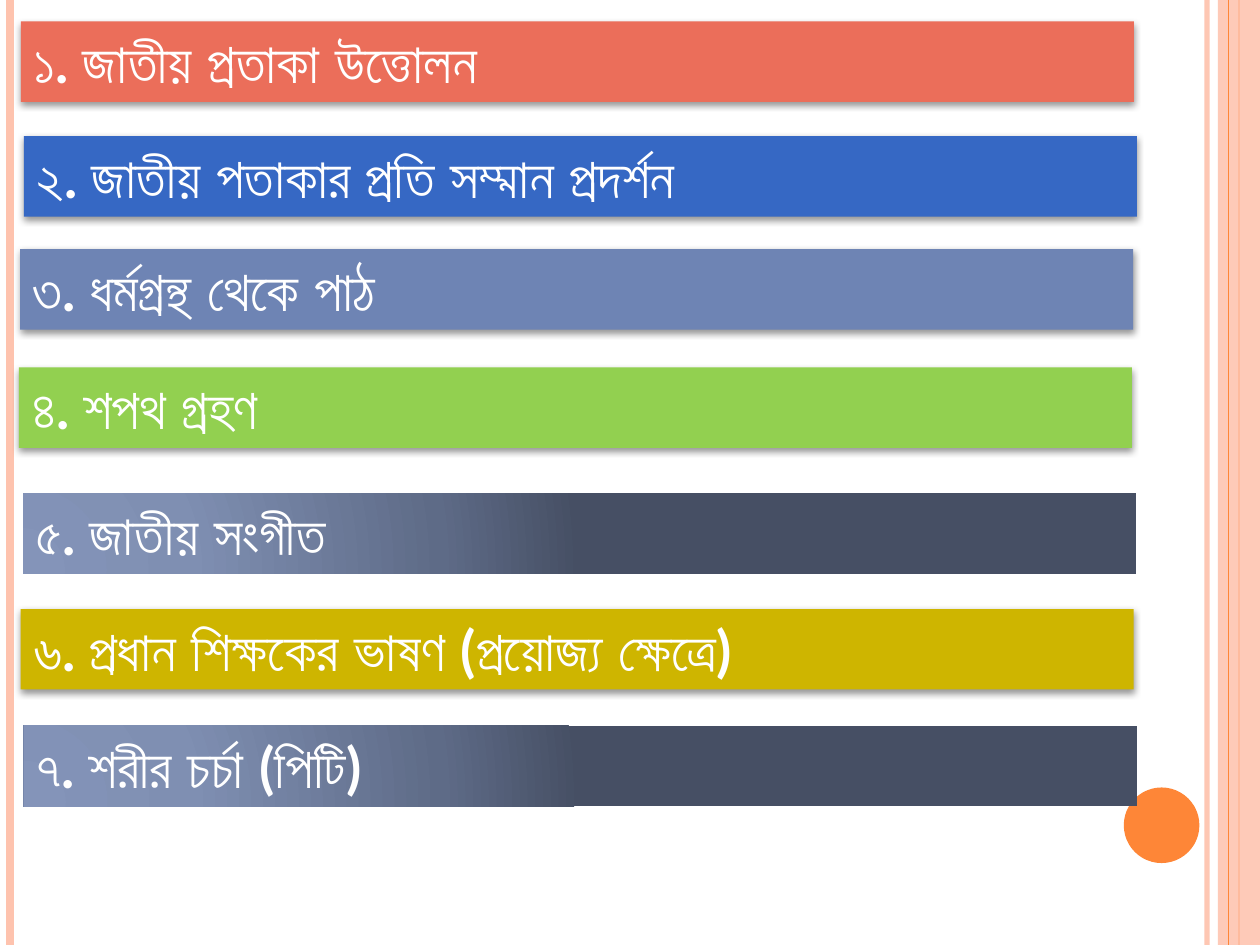
from lxml import etree
from pptx import Presentation
from pptx.dml.color import RGBColor
from pptx.enum import shapes, text
from pptx.oxml import ns
from pptx.util import Pt

COLORS = {
    "peach": "FEC3AE", "orange": "FE8637", "white": "FFFFFF", "black": "000000",
    "coral": "EB6E5A", "blue": "3668C4", "slate": "6E84B4",
    "green": "92D050", "mustard": "CEB500",
}
DUSK = [(0, "8494B9"), (30, "7F8FB2"), (75, "5E6B87"), (100, "464F64")]
DUSK_FOCUS = {"l": 5, "t": 100, "r": 120, "b": 10}
ACTIVITIES = [
    ("১. জাতীয় প্রতাকা উত্তোলন", "coral", 12, 12.24),
    ("২. জাতীয় পতাকার প্রতি সম্মান প্রদর্শন", "blue", 13.7, 77.8),
    ("৩. ধর্মগ্রন্থ থেকে পাঠ", "slate", 11.5, 142.4),
    ("৪. শপথ গ্রহণ", "green", 10.8, 210),
    ("৫. জাতীয় সংগীত", "dusk", 13.2, 282),
    ("৬. প্রধান শিক্ষকের ভাষণ (প্রয়োজ্য ক্ষেত্রে)", "mustard", 11.8, 348),
    ("৭. শরীর চর্চা (পিটি)", "dusk", 13.7, 414.8),
]
BAR_WIDTH, BAR_HEIGHT = 636, 46
RAILS_BEHIND = [(689.8, "peach", 3, 93), (5.8, "peach", 4.5, 100), (708, "orange", 1.5, 100)]
RAIL_FRONT = (702, "orange", 0.75, 100)
SLIDE_WIDTH, SLIDE_HEIGHT = 720, 540


def rgb(name):
    return RGBColor.from_string(COLORS[name])


def add(parent, tag, **attributes):
    return etree.SubElement(parent, ns.qn(tag), {k: str(v) for k, v in attributes.items()})


def set_alpha(properties, percent):
    if percent < 100:
        color = next(properties.iter(ns.qn("a:srgbClr")))
        add(color, "a:alpha", val=percent * 1000)


def add_rail(slide, x, color, width, opacity):
    rail = slide.shapes.add_connector(
        shapes.MSO_CONNECTOR.STRAIGHT, Pt(x), Pt(0), Pt(x), Pt(SLIDE_HEIGHT))
    rail.line.color.rgb = rgb(color)
    rail.line.width = Pt(width)
    properties = rail._element.spPr
    set_alpha(properties, opacity)
    add(properties, "a:effectLst")


def add_plain(slide, kind, box, color=None):
    shape = slide.shapes.add_shape(kind, *map(Pt, box))
    shape.shadow.inherit = False
    shape.line.fill.background()
    if color:
        shape.fill.solid()
        shape.fill.fore_color.rgb = rgb(color)
    return shape


def fill_dusk(shape):
    shape.fill.gradient()
    gradient = shape._element.spPr.find(ns.qn("a:gradFill"))
    for child in list(gradient):
        gradient.remove(child)
    stops = add(gradient, "a:gsLst")
    for position, color in DUSK:
        add(add(stops, "a:gs", pos=position * 1000), "a:srgbClr", val=color)
    focus = add(gradient, "a:path", path="circle")
    add(focus, "a:fillToRect", **{side: value * 1000 for side, value in DUSK_FOCUS.items()})


def add_shadow(shape):
    effects = shape._element.spPr.find(ns.qn("a:effectLst"))
    shadow = add(effects, "a:outerShdw", blurRad=Pt(4), dist=Pt(1.6),
                 dir=5400000, rotWithShape=0)
    add(shadow, "a:srgbClr", val=COLORS["black"])
    set_alpha(shadow, 42)


def add_activity(slide, label, color, left, top):
    box = (left, top, BAR_WIDTH, BAR_HEIGHT)
    solid = None if color == "dusk" else color
    bar = add_plain(slide, shapes.MSO_SHAPE.RECTANGLE, box, solid)
    if solid is None:
        fill_dusk(bar)
    add_shadow(bar)
    frame = bar.text_frame
    frame.word_wrap = True
    frame.auto_size = text.MSO_AUTO_SIZE.SHAPE_TO_FIT_TEXT
    frame.vertical_anchor = text.MSO_ANCHOR.TOP
    line = frame.paragraphs[0]
    line.text = label
    line.alignment = text.PP_ALIGN.LEFT
    line.font.name = "Lato"
    line.font.size = Pt(32)
    line.font.bold = True
    line.font.color.rgb = rgb("white")


def main():
    deck = Presentation()
    deck.slide_width, deck.slide_height = Pt(SLIDE_WIDTH), Pt(SLIDE_HEIGHT)
    slide = deck.slides.add_slide(deck.slide_layouts[6])
    for rail in RAILS_BEHIND:
        add_rail(slide, *rail)
    band = add_plain(slide, shapes.MSO_SHAPE.RECTANGLE, (696, 0, 24, SLIDE_HEIGHT), "peach")
    set_alpha(band._element.spPr, 87)
    add_rail(slide, *RAIL_FRONT)
    add_plain(slide, shapes.MSO_SHAPE.OVAL, (642.2, 450, 43.2, 43.2), "orange")
    for activity in ACTIVITIES:
        add_activity(slide, *activity)
    deck.save("out.pptx")


if __name__ == "__main__":
    main()
